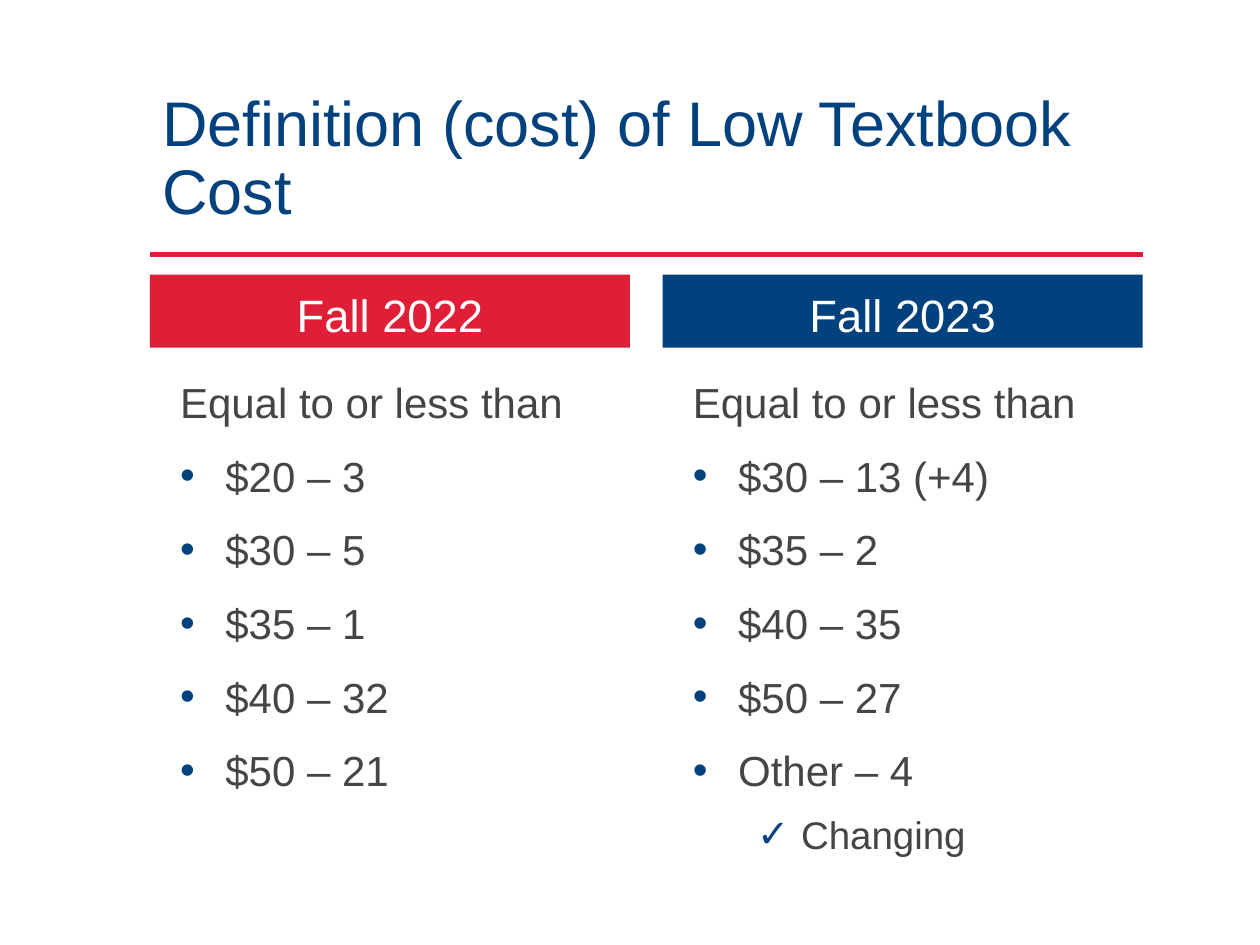
from lxml.etree import SubElement
from pptx import Presentation
from pptx.dml.color import RGBColor
from pptx.enum.shapes import MSO_CONNECTOR, MSO_SHAPE
from pptx.enum.text import MSO_ANCHOR, PP_ALIGN
from pptx.oxml.ns import qn
from pptx.util import Inches, Pt

RED, BLUE, GRAY, WHITE = "DE1F37", "00417E", "454545", "FFFFFF"
TITLE = "Definition (cost) of Low Textbook Cost"
LEAD = "Equal to or less than"
COLUMNS = [
    ("Fall 2022", RED, 3.75,
     ["$20 – 3", "$30 – 5", "$35 – 1", "$40 – 32", "$50 – 21"], []),
    ("Fall 2023", BLUE, 4.15,
     ["$30 – 13 (+4)", "$35 – 2", "$40 – 35", "$50 – 27", "Other – 4"],
     ["Changing"]),
]
STYLES = {
    "lead": dict(size=24, before=7.5, left=0.14, hang=0, mark=None),
    "item": dict(size=24, before=7.5, left=0.5, hang=-0.36, mark="•"),
    "sub": dict(size=22, before=3.8, left=1, hang=-0.35, mark="✓"),
}
LEFT, WIDTH, COL, STEP = 1.19, 7.88, 3.81, 4.07


def color(code):
    return RGBColor.from_string(code)


def style(par, size, ink, line, before=0):
    par.line_spacing = line
    par.space_before = Pt(before)
    for run in par.runs:
        run.font.name = "Arial"
        run.font.size = Pt(size)
        run.font.color.rgb = color(ink)


def indent(par, left, hang, mark):
    props = par._p.get_or_add_pPr()
    props.set("marL", str(Inches(left)))
    props.set("indent", str(Inches(hang)))
    if mark:
        tint = SubElement(props, qn("a:buClr"))
        SubElement(tint, qn("a:srgbClr"), val=BLUE)
        SubElement(props, qn("a:buFont"), typeface="Arial")
        SubElement(props, qn("a:buChar"), char=mark)


def add_text(slide, *box):
    frame = slide.shapes.add_textbox(*map(Inches, box)).text_frame
    frame.word_wrap = True
    return frame


def add_head(slide, left, text, fill):
    box = map(Inches, (left, 2.18, COL, 0.58))
    shape = slide.shapes.add_shape(MSO_SHAPE.RECTANGLE, *box)
    shape.shadow.inherit = False
    shape.fill.solid()
    shape.fill.fore_color.rgb = color(fill)
    shape.line.fill.background()
    frame = shape.text_frame
    frame.vertical_anchor = MSO_ANCHOR.BOTTOM
    frame.text = text
    par = frame.paragraphs[0]
    par.alignment = PP_ALIGN.CENTER
    style(par, 25.9, WHITE, 0.8, 7.5)


def add_list(slide, left, height, items, subs):
    frame = add_text(slide, left, 2.86, COL, height)
    rows = [("lead", LEAD)]
    rows += [("item", text) for text in items]
    rows += [("sub", text) for text in subs]
    frame.text = "\n".join(text for _, text in rows)
    for par, (kind, _) in zip(frame.paragraphs, rows):
        look = STYLES[kind]
        par.level = int(kind == "sub")
        style(par, look["size"], GRAY, 1.2, look["before"])
        indent(par, look["left"], look["hang"], look["mark"])


def main():
    deck = Presentation()
    deck.slide_width, deck.slide_height = Inches(10), Inches(7.5)
    slide = deck.slides.add_slide(deck.slide_layouts[6])

    ends = map(Inches, (LEFT, 2.02, LEFT + WIDTH, 2.02))
    rule = slide.shapes.add_connector(MSO_CONNECTOR.STRAIGHT, *ends)
    rule.line.color.rgb = color(RED)
    rule.line.width = Pt(2.5)
    SubElement(rule._element.spPr, qn("a:effectLst"))

    frame = add_text(slide, LEFT, 0.88, WIDTH, 0.98)
    frame.vertical_anchor = MSO_ANCHOR.BOTTOM
    frame.text = TITLE
    style(frame.paragraphs[0], 36, BLUE, 0.9)

    for i, (head, fill, height, items, subs) in enumerate(COLUMNS):
        left = LEFT + i * STEP
        add_head(slide, left, head, fill)
        add_list(slide, left, height, items, subs)

    deck.save("out.pptx")


if __name__ == "__main__":
    main()
